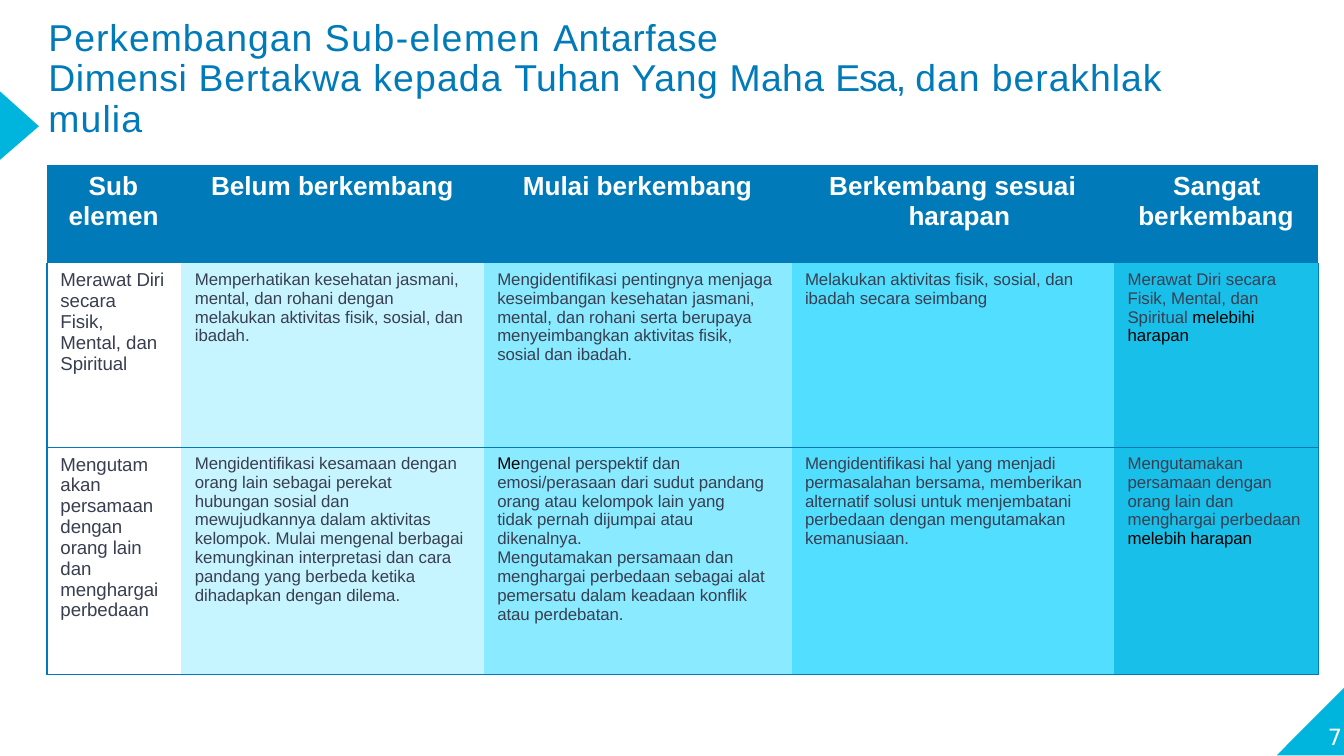
from dataclasses import dataclass

import pptx
import pptx.dml.color
import pptx.enum.text
import pptx.oxml
import pptx.oxml.ns
import pptx.util

Inches = pptx.util.Inches
Pt = pptx.util.Pt


@dataclass(frozen=True)
class Theme:
    blue: str = "007AB8"
    cyan: str = "00B5DD"
    white: str = "FFFFFF"
    ink: str = "393E50"
    black: str = "000000"
    font: str = "Arial"
    number_font: str = "DejaVu Sans"
    title: float = 20
    header: float = 14
    aspect: float = 10
    body: float = 9
    number: float = 12


THEME = Theme()


@dataclass(frozen=True)
class Stage:
    """One table column; bars in a body paragraph enclose black text."""
    heading: str
    margin: float
    indent: float
    width: float
    fill: str | None
    size: float
    care: tuple[str, ...]
    empathy: tuple[str, ...]


STAGES = [
    Stage("Sub elemen", 0.16, 0.15, 1, None, THEME.aspect,
          ("Merawat Diri\nsecara\nFisik,\nMental, dan\nSpiritual",),
          ("Mengutam\nakan\npersamaan\ndengan\norang lain\ndan\nmenghargai\nperbedaan",)),
    Stage("Belum berkembang", 0.22, 0, 2.25, "C7F5FF", THEME.body,
          ("Memperhatikan kesehatan jasmani, mental, dan rohani dengan\n"
           "melakukan aktivitas fisik, sosial, dan\nibadah.",),
          ("Mengidentifikasi kesamaan dengan orang lain sebagai perekat\n"
           "hubungan sosial dan\nmewujudkannya dalam aktivitas kelompok. "
           "Mulai mengenal berbagai kemungkinan interpretasi dan cara "
           "pandang yang berbeda ketika dihadapkan dengan dilema.",)),
    Stage("Mulai berkembang", 0.29, 0, 2.29, "8AEAFF", THEME.body,
          ("Mengidentifikasi pentingnya menjaga keseimbangan kesehatan "
           "jasmani, mental, dan rohani serta berupaya menyeimbangkan "
           "aktivitas fisik,\nsosial dan ibadah.",),
          ("|Me|ngenal perspektif dan emosi/perasaan dari sudut pandang "
           "orang atau kelompok lain yang\ntidak pernah dijumpai atau\n"
           "dikenalnya.",
           "Mengutamakan persamaan dan menghargai perbedaan sebagai alat "
           "pemersatu dalam keadaan konflik\natau perdebatan.")),
    Stage("Berkembang sesuai harapan", 0.87, -0.59, 2.4, "52DFFF", THEME.body,
          ("Melakukan aktivitas fisik, sosial, dan", "ibadah secara seimbang"),
          ("Mengidentifikasi hal yang menjadi permasalahan bersama, memberikan "
           "alternatif solusi untuk menjembatani perbedaan dengan "
           "mengutamakan kemanusiaan.",)),
    Stage("Sangat berkembang", 0.18, 0.26, 1.52, "18BFE8", THEME.body,
          ("Merawat Diri secara\nFisik, Mental, dan\nSpiritual |melebihi harapan",),
          ("Mengutamakan persamaan dengan orang lain dan menghargai "
           "perbedaan\n|melebih harapan",)),
]
ROW_HEIGHTS = [0.73, 1.37, 1.69]

# Title lines as (text, letter spacing in points)
TITLE = [
    [("Perkembangan ", 0.5), ("Sub-elemen ", 0.8), ("Antarfase", 0.3)],
    [("Dimensi ", 0.3), ("Bertakwa ", 0.5), ("kepada ", 0.6), ("Tuhan ", 0.2),
     ("Yang ", 0.3), ("Maha ", 0.2), ("Esa, ", -0.7), ("dan berakhlak ", 0.5),
     ("mulia", 0.6)],
]

# Corner and edge ornaments as outline points
ORNAMENTS = [
    [(0.29, 0.94), (0, 0.68), (0, 1.19)],
    [(10, 5.12), (9.5, 5.62), (10, 5.62)],
]


def rgb(value: str) -> pptx.dml.color.RGBColor:
    return pptx.dml.color.RGBColor.from_string(value)


def write(paragraph, text: str, *, size: float, color: str,
          font: str = THEME.font, bold: bool = False, tracking: float = 0) -> None:
    """Add formatted text to a paragraph; newlines become line breaks."""
    for index, line in enumerate(text.split("\n")):
        if index:
            paragraph.add_line_break()
        if not line:
            continue
        run = paragraph.add_run()
        run.text = line
        run.font.name, run.font.size, run.font.bold = font, Pt(size), bold
        run.font.color.rgb = rgb(color)
        run.font._element.set("spc", str(round(tracking * 100)))


def set_margins(frame, left: float, top: float, right: float) -> None:
    frame.margin_left, frame.margin_top = Inches(left), Inches(top)
    frame.margin_right, frame.margin_bottom = Inches(right), 0


def add_border(cell, sides: str) -> None:
    properties = cell._tc.get_or_add_tcPr()
    for position, side in enumerate(sides):
        line = pptx.oxml.parse_xml(
            f'<a:ln{side} {pptx.oxml.ns.nsdecls("a")} w="{Pt(0.75)}"><a:solidFill>'
            f'<a:srgbClr val="{THEME.blue}"/></a:solidFill></a:ln{side}>')
        properties.insert(position, line)


def fill_cell(cell, color: str | None) -> None:
    if color is None:
        cell.fill.background()
    else:
        cell.fill.solid()
        cell.fill.fore_color.rgb = rgb(color)


def draw_ornaments(slide) -> None:
    first, *others = ORNAMENTS
    builder = slide.shapes.build_freeform(*map(Inches, first[0]), scale=1.0)
    builder.add_line_segments([tuple(map(Inches, point)) for point in first[1:]])
    for outline in others:
        builder.move_to(*map(Inches, outline[0]))
        builder.add_line_segments([tuple(map(Inches, point)) for point in outline[1:]])
    ornament = builder.convert_to_shape()
    ornament.shadow.inherit = False
    ornament.fill.solid()
    ornament.fill.fore_color.rgb = rgb(THEME.cyan)
    ornament.line.fill.background()


def draw_title(slide) -> None:
    title = slide.shapes.title
    title.left, title.top = Inches(0.34), Inches(0.13)
    title.width, title.height = Inches(9.03), Inches(0.63)
    frame = title.text_frame
    set_margins(frame, 0.02, 0.01, 0.2)
    frame.word_wrap = True
    frame.auto_size = pptx.enum.text.MSO_AUTO_SIZE.SHAPE_TO_FIT_TEXT
    frame.vertical_anchor = pptx.enum.text.MSO_ANCHOR.TOP
    for index, pieces in enumerate(TITLE):
        paragraph = frame.add_paragraph() if index else frame.paragraphs[0]
        paragraph.alignment = pptx.enum.text.PP_ALIGN.LEFT
        paragraph.line_spacing, paragraph.space_before = Pt(21.6), Pt(0)
        for text, tracking in pieces:
            write(paragraph, text, size=THEME.title, color=THEME.blue, tracking=tracking)


def draw_header_cell(cell, stage: Stage) -> None:
    set_margins(cell, 0, 0.05, 0)
    fill_cell(cell, THEME.blue)
    heading = cell.text_frame.paragraphs[0]
    properties = heading._p.get_or_add_pPr()
    properties.set("marL", str(Inches(stage.margin)))
    properties.set("indent", str(Inches(stage.indent)))
    write(heading, stage.heading, size=THEME.header, color=THEME.white,
          bold=True, tracking=-0.03)


def draw_body_cell(cell, stage: Stage, paragraphs: tuple[str, ...]) -> None:
    set_margins(cell, 0.1, 0.05, 0.07)
    fill_cell(cell, stage.fill)
    for index, text in enumerate(paragraphs):
        paragraph = cell.text_frame.add_paragraph() if index else cell.text_frame.paragraphs[0]
        for part, segment in enumerate(text.split("|")):
            write(paragraph, segment, size=stage.size, tracking=-0.04,
                  color=THEME.black if part % 2 else THEME.ink)


def draw_table(slide) -> None:
    progress = slide.shapes.add_table(
        len(ROW_HEIGHTS), len(STAGES), Inches(0.35), Inches(1.23),
        Inches(sum(stage.width for stage in STAGES)), Inches(sum(ROW_HEIGHTS))).table
    # Plain style without grid lines or bands
    style = progress._tbl.tblPr.find(pptx.oxml.ns.qn("a:tableStyleId"))
    style.text = "{2D5ABB26-0587-4C30-8999-92F81FD0307C}"
    progress.horz_banding = False
    for row, height in zip(progress.rows, ROW_HEIGHTS):
        row.height = Inches(height)
    for column, stage in enumerate(STAGES):
        progress.columns[column].width = Inches(stage.width)
        draw_header_cell(progress.cell(0, column), stage)
        for row, paragraphs in enumerate((stage.care, stage.empathy), start=1):
            cell = progress.cell(row, column)
            draw_body_cell(cell, stage, paragraphs)
            left = "L" if column == 0 else ""
            right = "R" if column == len(STAGES) - 1 else ""
            add_border(cell, left + right + ("T" if row > 1 else "") + "B")


def draw_page_number(slide) -> None:
    frame = slide.shapes.add_textbox(
        Inches(9.87), Inches(5.37), Inches(0.11), Inches(0.23)).text_frame
    set_margins(frame, 0.01, 0.01, 0)
    frame.word_wrap = True
    write(frame.paragraphs[0], "7", size=THEME.number, color=THEME.white,
          font=THEME.number_font)


def main() -> None:
    deck = pptx.Presentation()
    # Widescreen, 16 to 9
    deck.slide_width = Inches(10)
    deck.slide_height = deck.slide_width * 9 // 16
    slide = deck.slides.add_slide(deck.slide_layouts[5])
    draw_ornaments(slide)
    draw_title(slide)
    draw_table(slide)
    draw_page_number(slide)
    deck.save("out.pptx")


if __name__ == "__main__":
    main()
